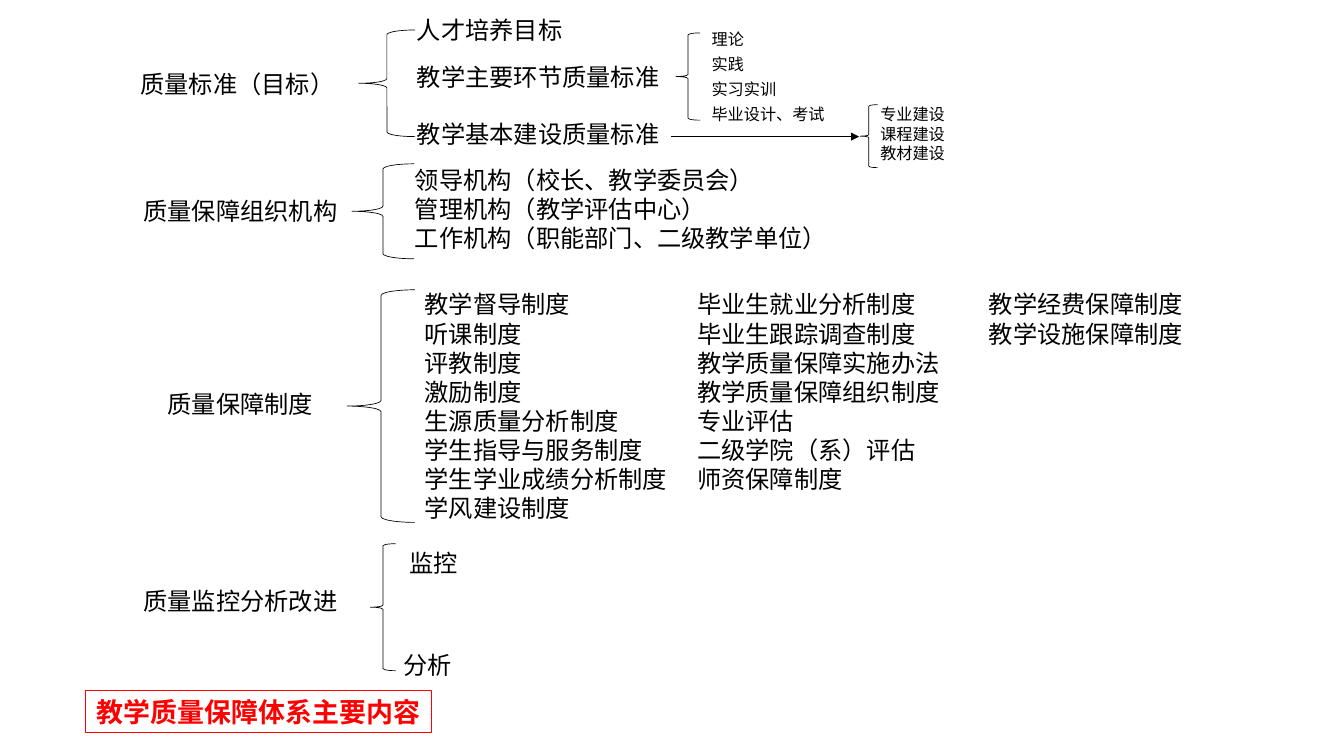
from lxml.etree import SubElement
from pptx import Presentation
from pptx.dml.color import RGBColor
from pptx.enum.shapes import MSO_CONNECTOR, MSO_SHAPE
from pptx.enum.text import MSO_ANCHOR, MSO_AUTO_SIZE, PP_ALIGN
from pptx.oxml.ns import qn
from pptx.util import Inches, Pt

BLACK, RED = "000000", "FF0000"


def color(value):
    return RGBColor.from_string(value)


def cells(*counts):
    """Turn grid counts into lengths; a column and a row are both 0.1 inch."""
    return [Inches(n / 10) for n in counts]


class Board:
    font = "Calibri"
    line_width = 0.5

    def __init__(self, slide):
        self.slide = slide

    def add_run(self, p, text, size, hue=BLACK, bold=False):
        r = p.add_run()
        r.text = text
        r.font.name = self.font
        r.font.size = Pt(size)
        r.font.bold = bold
        r.font.color.rgb = color(hue)
        SubElement(r.font._element, qn("a:ea"), typeface=self.font)

    def stroke(self, sp, hue=BLACK, width=line_width):
        sp.line.color.rgb = color(hue)
        sp.line.width = Pt(width)

    def title(self, text, col, row, cols, rows):
        sp = self.slide.shapes.title
        sp.left, sp.top, sp.width, sp.height = cells(col, row, cols, rows)
        self.stroke(sp, RED, 0.75)
        tf = sp.text_frame
        tf.auto_size = MSO_AUTO_SIZE.NONE
        tf.vertical_anchor = MSO_ANCHOR.MIDDLE
        tf.word_wrap = False
        p = tf.paragraphs[0]
        p.alignment = PP_ALIGN.CENTER
        self.add_run(p, text, 20, RED, True)

    def text(self, col, row, *lines, size=18):
        """Add a box sized by its longest line of full-width characters."""
        em = size / 7.2
        cols = max(map(len, lines)) * em + 2.2
        rows = len(lines) * em * 1.2 + 1
        sp = self.slide.shapes.add_textbox(*cells(col, row, cols, rows))
        tf = sp.text_frame
        tf.word_wrap = True
        for i, line in enumerate(lines):
            p = tf.add_paragraph() if i else tf.paragraphs[0]
            self.add_run(p, line, size)

    def brace(self, col, row, cols, rows):
        sp = self.slide.shapes.add_shape(
            MSO_SHAPE.LEFT_BRACE, *cells(col, row, cols, rows))
        sp.shadow.inherit = False
        sp.fill.background()
        self.stroke(sp)

    def arrow(self, col, row, end_col):
        cn = self.slide.shapes.add_connector(
            MSO_CONNECTOR.STRAIGHT, *cells(col, row, end_col, row))
        self.stroke(cn)
        SubElement(cn.line._get_or_add_ln(), qn("a:tailEnd"), type="triangle")
        SubElement(cn._element.spPr, qn("a:effectLst"))


def main():
    prs = Presentation()
    prs.slide_width, prs.slide_height = cells(138.6, 78)
    board = Board(prs.slides.add_slide(prs.slide_layouts[5]))
    board.title("教学质量保障体系主要内容", 8.8, 71.2, 35.7, 4.4)

    for col, row, topic in [
        (13.5, 6.7, "质量标准（目标）"),
        (13.8, 19.8, "质量保障组织机构"),
        (16.3, 39.7, "质量保障制度"),
        (13.8, 60, "质量监控分析改进"),
    ]:
        board.text(col, row, topic)

    for brace in [
        (37, 3.1, 5.8, 11),
        (36.3, 16.9, 6.4, 9.8),
        (35.8, 29.9, 7, 24),
        (38.2, 56.1, 2.6, 13.1),
        (69.7, 3.4, 2.5, 9),
        (88.7, 10.8, 1.8, 6.5),
    ]:
        board.brace(*brace)

    for row, standard in [
        (1.1, "人才培养目标"),
        (5.9, "教学主要环节质量标准"),
        (11.8, "教学基本建设质量标准"),
    ]:
        board.text(42, row, standard)
    for i, part in enumerate(["理论", "实践", "实习实训", "毕业设计、考试"]):
        board.text(72.4, 2.5 + 2.6 * i, part, size=12)
    board.arrow(69.2, 14.1, 88.6)
    board.text(89.8, 10.3, "专业建设", "课程建设", "教材建设", size=12)

    board.text(41.8, 16.6, "领导机构（校长、教学委员会）",
               "管理机构（教学评估中心）",
               "工作机构（职能部门、二级教学单位）")

    for col, rules in [
        (42.8, ["教学督导制度", "听课制度", "评教制度", "激励制度",
                "生源质量分析制度", "学生指导与服务制度",
                "学生学业成绩分析制度", "学风建设制度"]),
        (70.9, ["毕业生就业分析制度", "毕业生跟踪调查制度",
                "教学质量保障实施办法", "教学质量保障组织制度",
                "专业评估", "二级学院（系）评估", "师资保障制度"]),
        (101, ["教学经费保障制度", "教学设施保障制度"]),
    ]:
        board.text(col, 29.4, *rules)

    board.text(41.2, 56.1, "监控")
    board.text(40.6, 66.6, "分析")
    prs.save("out.pptx")


if __name__ == "__main__":
    main()
